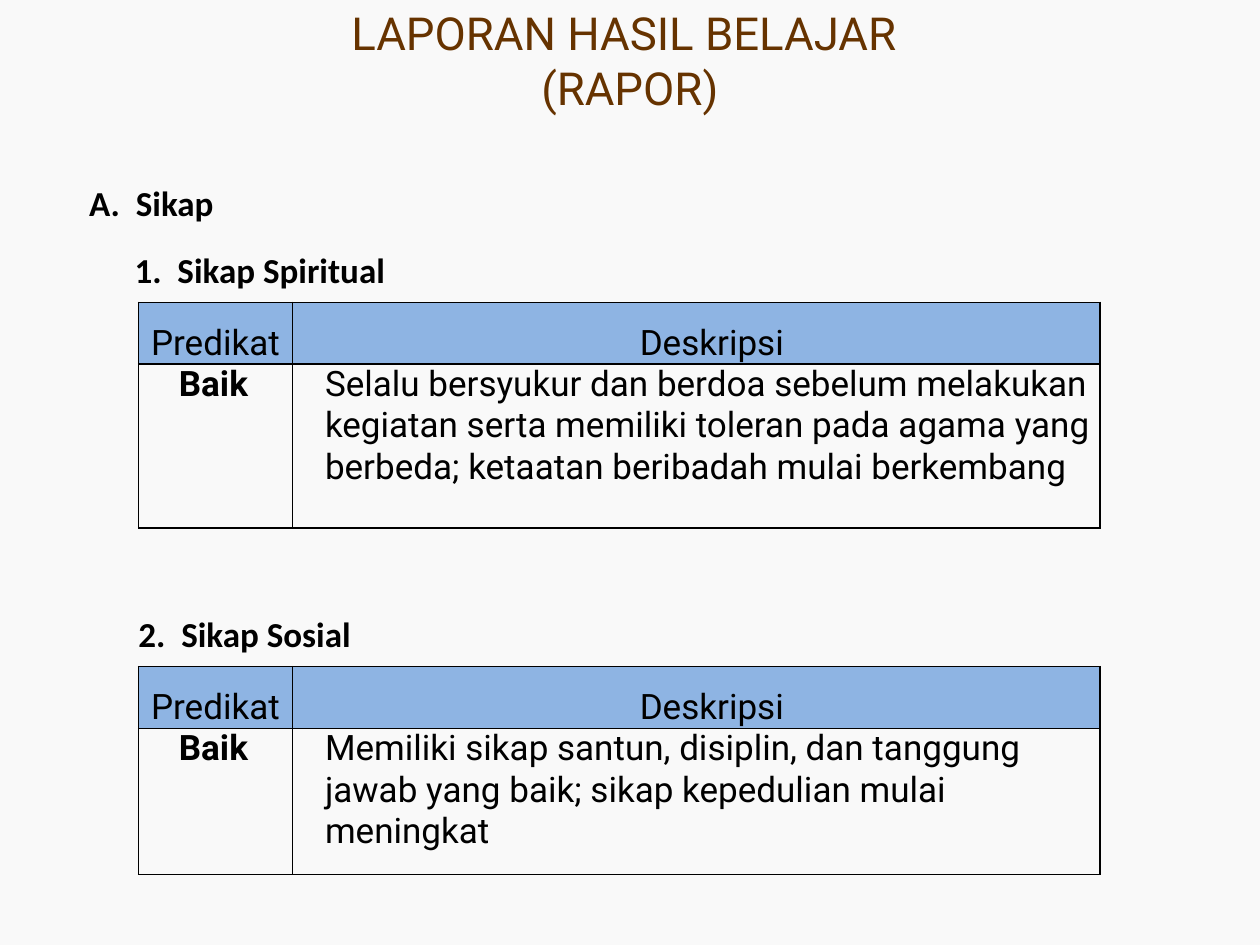
from dataclasses import dataclass

from lxml.etree import SubElement
from pptx import Presentation
from pptx.dml.color import RGBColor as RGB
from pptx.enum.text import MSO_ANCHOR as Anchor, MSO_AUTO_SIZE as AutoSize, PP_ALIGN as Align
from pptx.oxml.ns import qn
from pptx.util import Inches, Pt


@dataclass(frozen=True)
class Theme:
    background: RGB = RGB.from_string("F9F9F9")
    ink: RGB = RGB.from_string("000000")
    title_color: RGB = RGB.from_string("663300")
    header_fill: RGB = RGB.from_string("8EB4E3")
    body_font: str = "Roboto"
    heading_font: str = "Calibri"
    title_size: Pt = Pt(26)
    body_size: Pt = Pt(20)
    border_width: Pt = Pt(1)


def apply(target, values):
    for name, value in values.items():
        setattr(target, name, value)


def indent(para, left, first):
    properties = para._p.get_or_add_pPr()
    properties.set("marL", str(Inches(left)))
    properties.set("indent", str(Inches(first)))


class ReportPage:
    COLUMNS = (1.22, 6.41)

    def __init__(self, deck, theme):
        self.theme = theme
        self.page = deck.slides.add_slide(deck.slide_layouts[6])
        fill = self.page.background.fill
        fill.solid()
        fill.fore_color.rgb = theme.background

    def set_text(self, para, text, font, size, color, bold=False):
        para.text = text
        for span in para.runs:
            apply(span.font, {"name": font, "size": size, "bold": bold})
            span.font.color.rgb = color

    def text_box(self, left, top, width, height, **frame_format):
        box = self.page.shapes.add_textbox(*map(Inches, (left, top, width, height)))
        apply(box.text_frame, {"word_wrap": True, **frame_format})
        return box.text_frame.paragraphs[0]

    def title(self, text):
        para = self.text_box(0.5, -0.15, 9, 1.25, vertical_anchor=Anchor.MIDDLE)
        para.alignment = Align.CENTER
        theme = self.theme
        self.set_text(para, text, theme.body_font, theme.title_size, theme.title_color)

    def heading(self, text, left, top):
        para = self.text_box(left, top, 4.52, 0.44, auto_size=AutoSize.SHAPE_TO_FIT_TEXT)
        theme = self.theme
        self.set_text(para, text, theme.heading_font, theme.body_size, theme.ink, bold=True)

    def border(self, cell):
        properties = cell._tc.get_or_add_tcPr()
        for position, side in enumerate(("a:lnL", "a:lnR", "a:lnT", "a:lnB")):
            line = SubElement(properties, qn(side), w=str(self.theme.border_width))
            solid = SubElement(line, qn("a:solidFill"))
            SubElement(solid, qn("a:srgbClr"), val=str(self.theme.ink))
            properties.insert(position, line)

    def cell(self, cell, text, left=0, first=0, header=False, centred=False, bold=False):
        theme = self.theme
        apply(cell, {"margin_left": Inches(0.07), "margin_right": Inches(0.07),
                     "margin_top": 0, "margin_bottom": 0})
        if header:
            cell.fill.solid()
            cell.fill.fore_color.rgb = theme.header_fill
        else:
            cell.fill.background()
        self.border(cell)
        para = cell.text_frame.paragraphs[0]
        apply(para, {"alignment": Align.CENTER if centred else Align.LEFT,
                     "line_spacing": 1.5 if header else 1.0,
                     "space_before": Pt(6)})
        indent(para, left, first)
        self.set_text(para, text, theme.body_font, theme.body_size, theme.ink, bold)

    def grade_table(self, top, body_height, grade, description):
        heights = (0.49, body_height)
        frame = self.page.shapes.add_table(
            2, 2, Inches(1.1), Inches(top), Inches(sum(self.COLUMNS)), Inches(sum(heights)))
        table = frame.table
        apply(table, {"first_row": False, "horz_banding": False})
        for column, width in zip(table.columns, self.COLUMNS):
            column.width = Inches(width)
        for row, height in zip(table.rows, heights):
            row.height = Inches(height)
        self.cell(table.cell(0, 0), "Predikat", header=True, centred=True)
        self.cell(table.cell(0, 1), "Deskripsi", 0.5, -0.25, header=True, centred=True)
        self.cell(table.cell(1, 0), grade, 0.5, -0.25, bold=True)
        self.cell(table.cell(1, 1), description, 0.19)


def main():
    deck = Presentation()
    apply(deck, {"slide_width": Inches(10), "slide_height": Inches(7.5)})
    report = ReportPage(deck, Theme())
    report.grade_table(2.4, 1.3, "Baik",
                       "Selalu bersyukur dan berdoa sebelum melakukan kegiatan serta memiliki "
                       "toleran pada agama yang berbeda; ketaatan beribadah mulai berkembang")
    report.grade_table(5.29, 1.16, "Baik",
                       "Memiliki sikap santun, disiplin, dan tanggung jawab yang baik; "
                       "sikap kepedulian mulai meningkat")
    report.title("LAPORAN HASIL BELAJAR \v(RAPOR)")
    report.heading("A.  Sikap", 0.61, 1.39)
    report.heading("1.  Sikap Spiritual", 0.97, 1.92)
    report.heading("2.  Sikap Sosial", 1, 4.81)
    deck.save("out.pptx")


if __name__ == "__main__":
    main()
